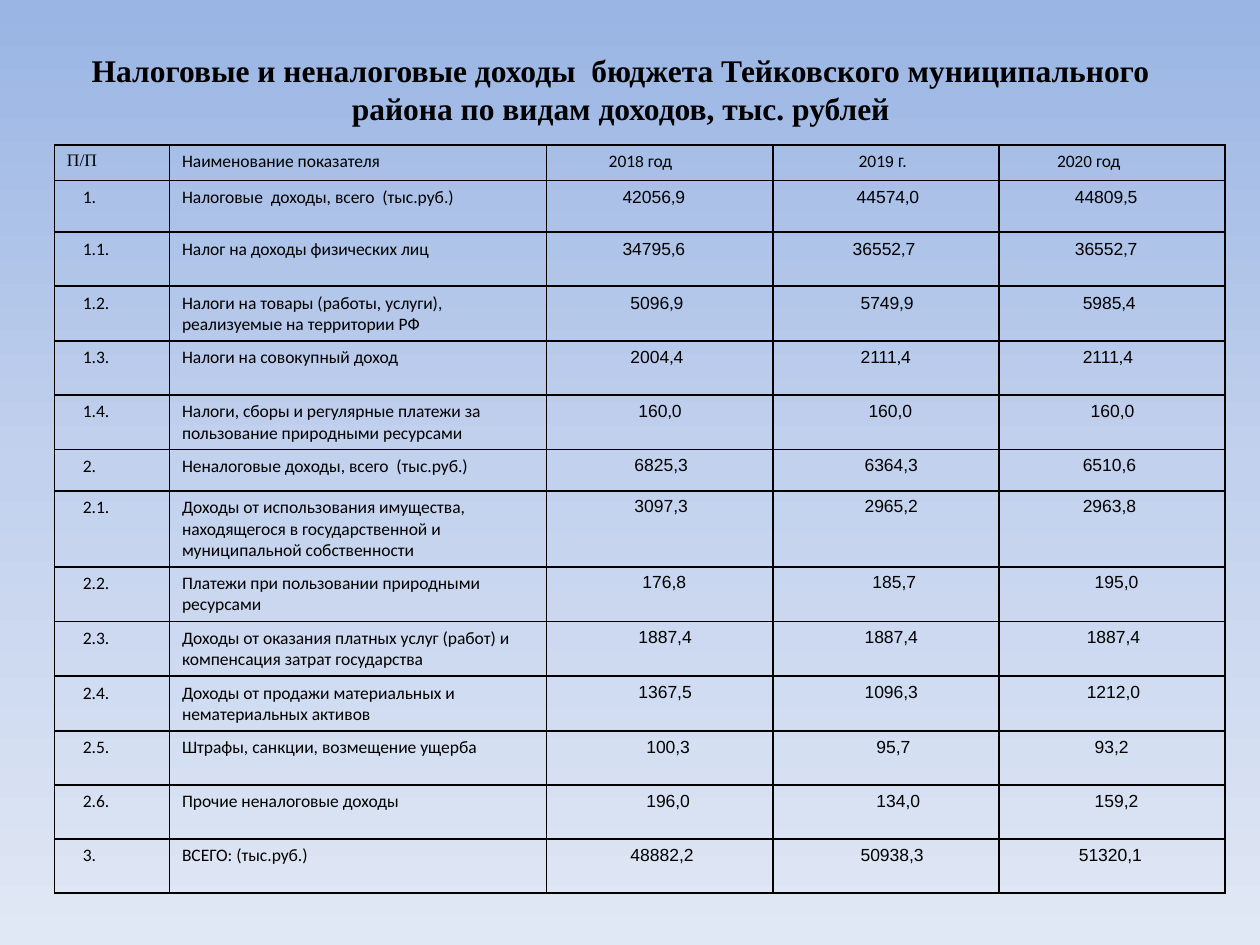
from copy import deepcopy
from typing import NamedTuple

from lxml import etree
from pptx import Presentation
from pptx.dml.color import RGBColor
from pptx.enum.text import MSO_ANCHOR, PP_ALIGN
from pptx.oxml.ns import qn
from pptx.util import Cm, Pt

MIDDLE = MSO_ANCHOR.MIDDLE
CENTER = PP_ALIGN.CENTER
SANS, BODY, SERIF = "Arial", "Calibri", "Times New Roman"
COLORS = {"ink": "000000", "top": "9AB5E4", "mid": "C2D1ED", "low": "E1E8F5"}
PAD, STEP = 0.25, 0.08
WIDTHS = (2.32, 7.6, 4.56, 4.56, 4.56)
TITLE = ("Налоговые и неналоговые доходы  бюджета Тейковского "
         "муниципального района по видам доходов, тыс. рублей")


class Bit(NamedTuple):
    text: str
    font: str = BODY
    size: float = 10
    bold: bool = False


class Entry(NamedTuple):
    code: str
    name: str
    sums: tuple[str, str, str]
    steps: tuple[int, int, int]
    mixed: int = 0
    height: float = 1.09


HEAD = (
    (0, [Bit("П/П", SERIF)]),
    (0, [Bit("Наименование показателя")]),
    (12.5, [Bit("201"), Bit("8", SANS, 9), Bit(" год")]),
    (18.5, [Bit("201"), Bit("9", SANS, 9), Bit(" "), Bit("г.", SANS)]),
    (11.5, [Bit("20"), Bit("20", SANS, 9), Bit(" год")]),
)
ENTRIES = (
    Entry("1.", "Налоговые  доходы, всего  (тыс.руб.)",
          ("42056,9", "44574,0", "44809,5"), (16, 18, 16), 3, 1.04),
    Entry("1.1.", "Налог на доходы физических лиц",
          ("34795,6", "36552,7", "36552,7"), (16, 17, 16), 3),
    Entry("1.2.", "Налоги на товары (работы, услуги), реализуемые на территории РФ",
          ("5096,9", "5749,9", "5985,4"), (18, 19, 18), 3),
    Entry("1.3.", "Налоги на совокупный доход",
          ("2004,4", "2111,4", "2111,4"), (18, 19, 18), 3),
    Entry("1.4.", "Налоги, сборы и регулярные платежи за пользование природными ресурсами",
          ("160,0", "160,0", "160,0"), (20, 21, 20), 1),
    Entry("2.", "Неналоговые доходы, всего  (тыс.руб.)",
          ("6825,3", "6364,3", "6510,6"), (19, 20, 18), height=0.83),
    Entry("2.1.", "Доходы от использования имущества, находящегося в "
          "государственной и муниципальной собственности",
          ("3097,3", "2965,2", "2963,8"), (19, 20, 18), height=1.53),
    Entry("2.2.", "Платежи при пользовании природными ресурсами",
          ("176,8", "185,7", "195,0"), (21, 22, 21)),
    Entry("2.3.", "Доходы от оказания платных услуг (работ) и компенсация затрат государства",
          ("1887,4", "1887,4", "1887,4"), (20, 20, 19)),
    Entry("2.4.", "Доходы от продажи материальных и нематериальных активов",
          ("1367,5", "1096,3", "1212,0"), (20, 20, 19)),
    Entry("2.5.", "Штрафы, санкции, возмещение ущерба",
          ("100,3", "95,7", "93,2"), (22, 23, 21)),
    Entry("2.6.", "Прочие неналоговые доходы",
          ("196,0", "134,0", "159,2"), (22, 23, 21)),
    Entry("3.", "ВСЕГО: (тыс.руб.)",
          ("48882,2", "50938,3", "51320,1"), (18, 19, 17)),
)


def paint(slide) -> None:
    fill = slide.background.fill
    fill.gradient()
    fill.gradient_angle = 270
    stops = next(slide.element.iter(qn("a:gsLst")))
    stops.append(deepcopy(stops[-1]))
    for stop, key, place in zip(fill.gradient_stops, ("top", "mid", "low"), (0, 0.5, 1)):
        stop.color.rgb = RGBColor.from_string(COLORS[key])
        stop.position = place


def write(para, bits: list[Bit]) -> None:
    for bit in bits:
        run = para.add_run()
        run.text = bit.text
        run.font.name = bit.font
        run.font.size = Pt(bit.size)
        run.font.bold = bit.bold
        run.font.color.rgb = RGBColor.from_string(COLORS["ink"])


def border(cell) -> None:
    props = cell._tc.get_or_add_tcPr()
    for spot, side in enumerate(("a:lnL", "a:lnR", "a:lnT", "a:lnB")):
        line = etree.Element(qn(side), w=str(Pt(1)))
        solid = etree.SubElement(line, qn("a:solidFill"))
        etree.SubElement(solid, qn("a:srgbClr"), val=COLORS["ink"])
        props.insert(spot, line)


def fill_cell(cell, steps: float, bits: list[Bit]) -> None:
    cell.margin_left = Cm(PAD + steps * STEP)
    cell.fill.background()
    border(cell)
    write(cell.text_frame.paragraphs[0], bits)


def split_sum(text: str, mixed: bool) -> list[Bit]:
    if not mixed:
        return [Bit(text, SANS)]
    whole, part = text.split(",")
    return [Bit(whole, SANS), Bit(","), Bit(part, SANS)]


def lay_out(entry: Entry) -> list[tuple[float, list[Bit]]]:
    cells = [(4, [Bit(entry.code)]), (0, [Bit(entry.name)])]
    for spot, (text, steps) in enumerate(zip(entry.sums, entry.steps)):
        cells.append((steps, split_sum(text, spot < entry.mixed)))
    return cells


def add_title(slide) -> None:
    frame = slide.shapes.add_textbox(Cm(1.1), Cm(0), Cm(22.83), Cm(3.6)).text_frame
    frame.word_wrap = True
    frame.vertical_anchor = MIDDLE
    para = frame.paragraphs[0]
    para.alignment = CENTER
    write(para, [Bit(TITLE, SERIF, 18, True)])


def add_grid(slide) -> None:
    rows = [HEAD] + [lay_out(entry) for entry in ENTRIES]
    heights = [0.72] + [entry.height for entry in ENTRIES]
    grid = slide.shapes.add_table(
        len(rows), len(WIDTHS), Cm(1.1), Cm(2.92), Cm(sum(WIDTHS)), Cm(sum(heights))
    ).table
    grid.first_row = False
    grid.horz_banding = False
    for column, width in zip(grid.columns, WIDTHS):
        column.width = Cm(width)
    for row, height, cells in zip(grid.rows, heights, rows):
        row.height = Cm(height)
        for cell, (steps, bits) in zip(row.cells, cells):
            fill_cell(cell, steps, bits)


def main() -> None:
    deck = Presentation()
    deck.slide_width, deck.slide_height = Cm(25.4), Cm(19.05)
    slide = deck.slides.add_slide(deck.slide_layouts[6])
    paint(slide)
    add_title(slide)
    add_grid(slide)
    deck.save("out.pptx")


if __name__ == "__main__":
    main()
